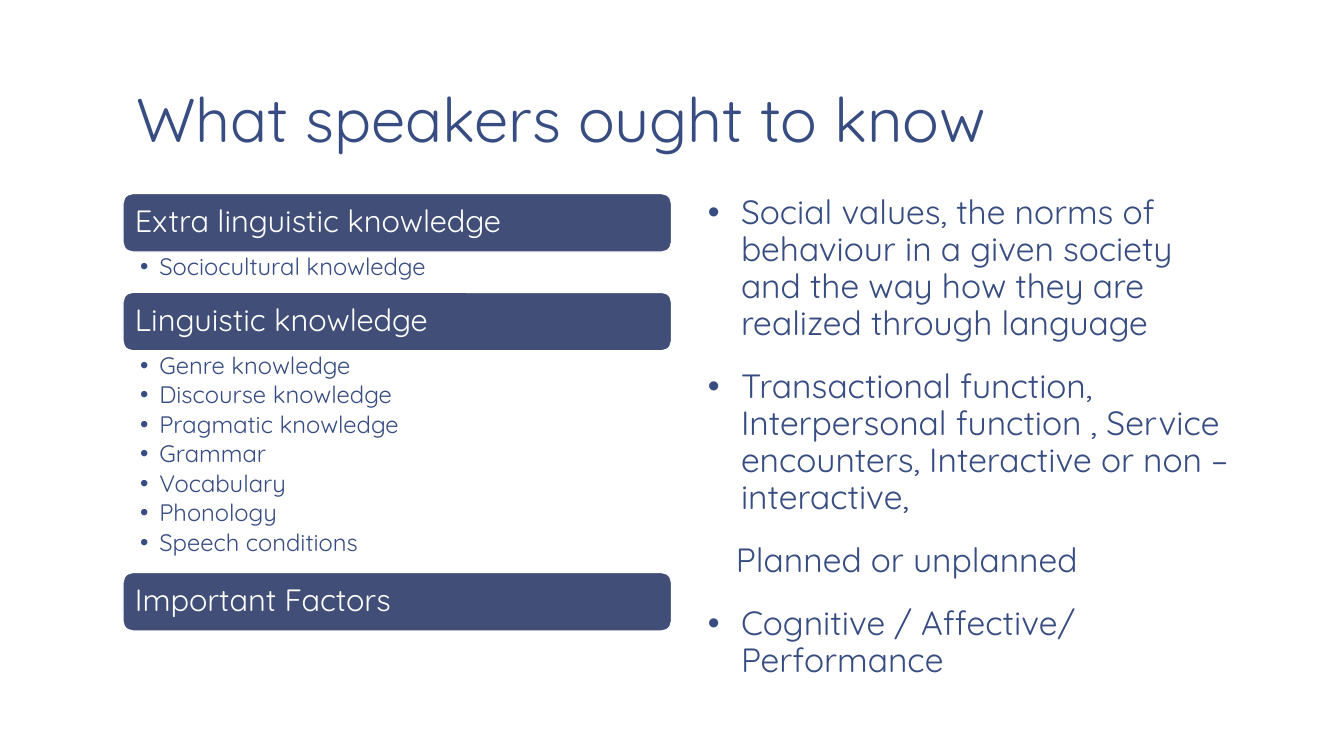
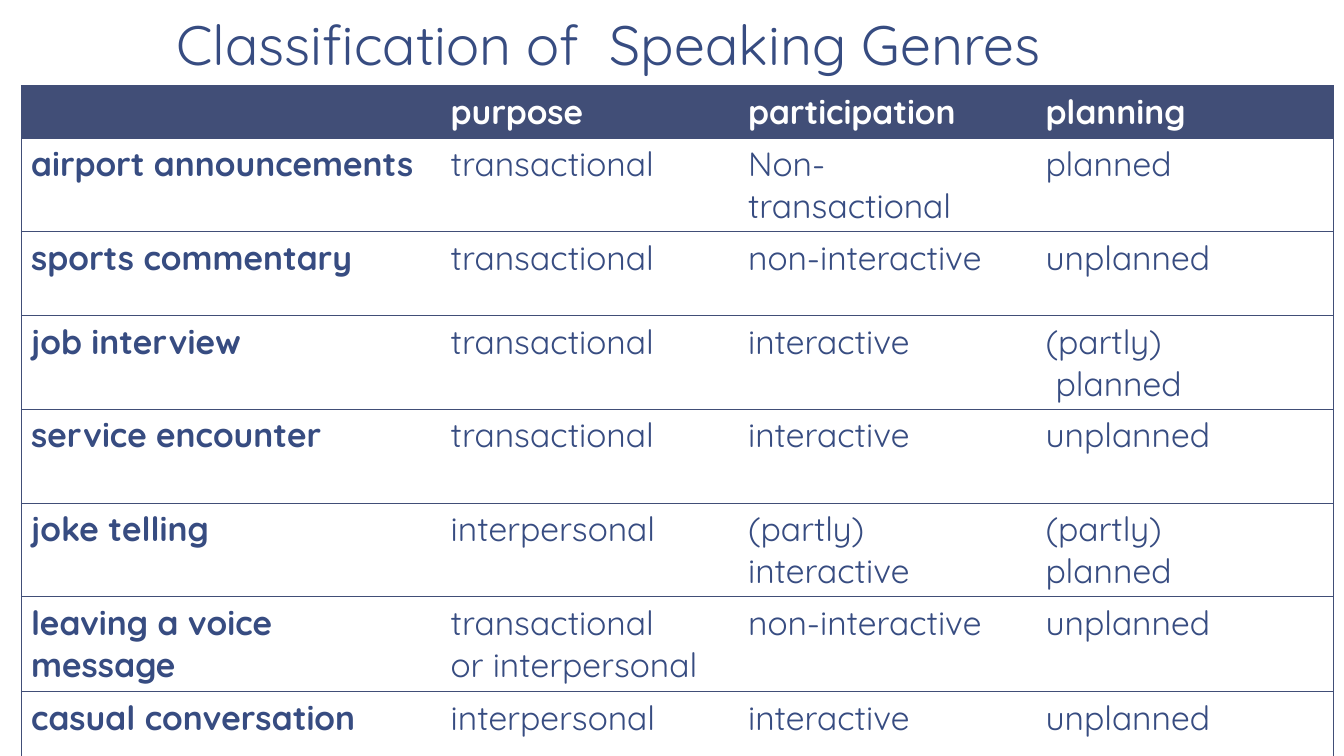
from dataclasses import dataclass

import lxml.etree
import pptx
import pptx.dml.color
import pptx.enum.shapes
import pptx.enum.text
import pptx.oxml.ns
import pptx.util

INK = pptx.dml.color.RGBColor(0x37, 0x4C, 0x81)
BAND = pptx.dml.color.RGBColor(0x41, 0x4E, 0x77)
WHITE = pptx.dml.color.RGBColor(0xFF, 0xFF, 0xFF)
FONT = "Quicksand"

SLIDE_WIDTH, SLIDE_HEIGHT = 13.33, 7.5
MARGIN_LEFT = 1.22
COLUMN_WIDTH = 5.44
COLUMN_STEP = 5.67
CONTENT_RIGHT = MARGIN_LEFT + COLUMN_STEP + COLUMN_WIDTH
TITLE_TOP = 0.08
BANDS_TOP = 1.92
BAND_HEIGHT = 0.58
ITEM_HEIGHT = 0.3
LIST_PADDING = 0.1

TABLE_LEFT, TABLE_TOP = 0.21, 0.85
TABLE_COLUMNS = (4.16, 2.95, 2.95, 2.95)
TABLE_ROWS = (0.52, 0.93, 0.83, 0.93, 0.93, 0.93, 0.94, 0.64)
PLAIN_TABLE_STYLE = "{2D5ABB26-0587-4C30-8999-92F81FD0307C}"


@dataclass(frozen=True)
class Box:
    left: float
    top: float
    width: float
    height: float

    def emu(self) -> tuple:
        return tuple(
            pptx.util.Inches(length)
            for length in (self.left, self.top, self.width, self.height)
        )


@dataclass(frozen=True)
class Style:
    size: float
    color: pptx.dml.color.RGBColor = INK
    bold: bool = False
    spacing: float = 1.0
    before: float = 0
    after: float = 0


@dataclass(frozen=True)
class Line:
    text: str
    indent: float = 0
    bulleted: bool = False


@dataclass(frozen=True)
class Topic:
    heading: str
    items: tuple[str, ...] = ()


@dataclass(frozen=True)
class Genre:
    name: str
    purpose: str
    participation: str
    planning: str


BAND_STYLE = Style(22, WHITE, spacing=0.9)
ITEM_STYLE = Style(17, spacing=0.9, after=2.7)
BODY_STYLE = Style(24, spacing=0.92, before=18.4)
HEADER_STYLE = Style(24, WHITE, bold=True)
NAME_STYLE = Style(24, bold=True)
CELL_STYLE = Style(24)

TOPICS = (
    Topic("Extra linguistic knowledge", ("Sociocultural knowledge",)),
    Topic(
        "Linguistic knowledge",
        (
            "Genre knowledge",
            "Discourse knowledge",
            "Pragmatic knowledge",
            "Grammar",
            "Vocabulary",
            "Phonology",
            "Speech conditions",
        ),
    ),
    Topic("Important Factors"),
)

EXPLANATIONS = (
    Line(
        "Social values, the norms of behaviour in a given society "
        "and the way how they are realized through language",
        0.33,
        True,
    ),
    Line(
        "Transactional function, Interpersonal function , Service "
        "encounters, Interactive or non – interactive,",
        0.33,
        True,
    ),
    Line("Planned or unplanned", 0.28),
    Line("Cognitive / Affective/ Performance", 0.33, True),
)

GENRES = (
    Genre("airport announcements", "transactional", "Non-transactional", "planned"),
    Genre("sports commentary", "transactional", "non-interactive", "unplanned"),
    Genre("job interview", "transactional", "interactive", "(partly)\n planned"),
    Genre("service encounter", "transactional", "interactive", "unplanned"),
    Genre("joke telling", "interpersonal", "(partly)\ninteractive", "(partly)\nplanned"),
    Genre(
        "leaving a voice\nmessage",
        "transactional\nor interpersonal",
        "non-interactive",
        "unplanned",
    ),
    Genre("casual conversation", "interpersonal", "interactive", "unplanned"),
)


def add_child(parent, tag: str, **attributes: str):
    child = lxml.etree.SubElement(parent, pptx.oxml.ns.qn(tag))
    for key, value in attributes.items():
        child.set(key, value)
    return child


def write_lines(frame, lines: tuple[Line, ...], style: Style) -> None:
    for index, line in enumerate(lines):
        paragraph = frame.paragraphs[0] if index == 0 else frame.add_paragraph()
        paragraph.text = line.text
        paragraph.alignment = pptx.enum.text.PP_ALIGN.LEFT
        paragraph.line_spacing = style.spacing
        paragraph.space_before = pptx.util.Pt(style.before if index else 0)
        paragraph.space_after = pptx.util.Pt(style.after)
        properties = paragraph._p.get_or_add_pPr()
        indent = pptx.util.Inches(line.indent)
        properties.set("marL", str(indent))
        properties.set("indent", str(-indent if line.bulleted else 0))
        if line.bulleted:
            add_child(properties, "a:buFont", typeface="Arial")
            add_child(properties, "a:buChar", char="•")
        else:
            add_child(properties, "a:buNone")
        paragraph.font.name = FONT
        paragraph.font.size = pptx.util.Pt(style.size)
        paragraph.font.bold = style.bold
        paragraph.font.color.rgb = style.color


def set_insets(frame, horizontal: float, vertical: float) -> None:
    frame.word_wrap = True
    frame.margin_left = frame.margin_right = pptx.util.Inches(horizontal)
    frame.margin_top = frame.margin_bottom = pptx.util.Inches(vertical)


def add_text(
    slide,
    box: Box,
    lines: tuple[Line, ...],
    style: Style,
    insets: tuple[float, float] = (0.13, 0.07),
    anchor=pptx.enum.text.MSO_ANCHOR.TOP,
) -> None:
    frame = slide.shapes.add_textbox(*box.emu()).text_frame
    set_insets(frame, *insets)
    frame.vertical_anchor = anchor
    write_lines(frame, lines, style)


def add_title(slide, text: str, left: float, height: float, size: float) -> None:
    add_text(
        slide,
        Box(left, TITLE_TOP, CONTENT_RIGHT - left, height),
        (Line(text),),
        Style(size, spacing=0.85),
        anchor=pptx.enum.text.MSO_ANCHOR.BOTTOM,
    )


def add_band(slide, box: Box, heading: str) -> None:
    band = slide.shapes.add_shape(
        pptx.enum.shapes.MSO_SHAPE.ROUNDED_RECTANGLE, *box.emu()
    )
    band.shadow.inherit = False
    band.fill.solid()
    band.fill.fore_color.rgb = BAND
    band.line.color.rgb = WHITE
    band.line.width = pptx.util.Pt(1)
    set_insets(band.text_frame, 0.09, 0.09)
    band.text_frame.vertical_anchor = pptx.enum.text.MSO_ANCHOR.MIDDLE
    write_lines(band.text_frame, (Line(heading),), BAND_STYLE)


def add_topics(slide, topics: tuple[Topic, ...]) -> None:
    top = BANDS_TOP
    for topic in topics:
        add_band(slide, Box(MARGIN_LEFT, top, COLUMN_WIDTH, BAND_HEIGHT), topic.heading)
        top += BAND_HEIGHT
        if topic.items:
            height = LIST_PADDING + ITEM_HEIGHT * len(topic.items)
            items = tuple(Line(item, 0.19, True) for item in topic.items)
            add_text(
                slide,
                Box(MARGIN_LEFT, top, COLUMN_WIDTH, height),
                items,
                ITEM_STYLE,
                (0.17, 0.03),
            )
            top += height


def set_borders(cell, visible: set[str]) -> None:
    properties = cell._tc.get_or_add_tcPr()
    for side in ("L", "R", "T", "B"):
        border = add_child(properties, f"a:ln{side}", w=str(pptx.util.Pt(0.5)))
        if side in visible:
            fill = add_child(border, "a:solidFill")
            add_child(fill, "a:srgbClr", val=str(BAND))
        else:
            add_child(border, "a:noFill")


def add_genre_table(slide, genres: tuple[Genre, ...]) -> None:
    box = Box(TABLE_LEFT, TABLE_TOP, sum(TABLE_COLUMNS), sum(TABLE_ROWS))
    table = slide.shapes.add_table(
        len(TABLE_ROWS), len(TABLE_COLUMNS), *box.emu()
    ).table
    table.horz_banding = False
    table._tbl.tblPr.find(pptx.oxml.ns.qn("a:tableStyleId")).text = PLAIN_TABLE_STYLE
    for column, width in zip(table.columns, TABLE_COLUMNS):
        column.width = pptx.util.Inches(width)
    for row, height in zip(table.rows, TABLE_ROWS):
        row.height = pptx.util.Inches(height)

    header = Genre("", "purpose", "participation", "planning")
    last_column, last_row = len(TABLE_COLUMNS) - 1, len(genres)
    for r, genre in enumerate((header, *genres)):
        values = (genre.name, genre.purpose, genre.participation, genre.planning)
        for c, value in enumerate(values):
            cell = table.cell(r, c)
            sides = {"T"} if r == last_row else {"T", "B"}
            if c == 0:
                sides.add("L")
            if c == last_column:
                sides.add("R")
            set_borders(cell, sides)
            if r == 0:
                cell.fill.solid()
                cell.fill.fore_color.rgb = BAND
                style = HEADER_STYLE
            else:
                cell.fill.background()
                style = NAME_STYLE if c == 0 else CELL_STYLE
            lines = tuple(
                Line(part.lstrip(), 0.1 if part.startswith(" ") else 0)
                for part in value.split("\n")
            )
            write_lines(cell.text_frame, lines, style)


def add_blank_slide(deck):
    slide = deck.slides.add_slide(deck.slide_layouts[6])
    slide.background.fill.solid()
    slide.background.fill.fore_color.rgb = WHITE
    return slide


def main() -> None:
    deck = pptx.Presentation()
    deck.slide_width = pptx.util.Inches(SLIDE_WIDTH)
    deck.slide_height = pptx.util.Inches(SLIDE_HEIGHT)

    knowledge = add_blank_slide(deck)
    add_title(knowledge, "What speakers ought to know", MARGIN_LEFT, 1.53, 44)
    add_topics(knowledge, TOPICS)
    explanations_box = Box(MARGIN_LEFT + COLUMN_STEP, 1.86, COLUMN_WIDTH, 5.64)
    add_text(knowledge, explanations_box, EXPLANATIONS, BODY_STYLE)

    classification = add_blank_slide(deck)
    add_title(classification, "Classification of  Speaking Genres", 1.62, 0.75, 39.6)
    add_genre_table(classification, GENRES)

    deck.save("out.pptx")


if __name__ == "__main__":
    main()
